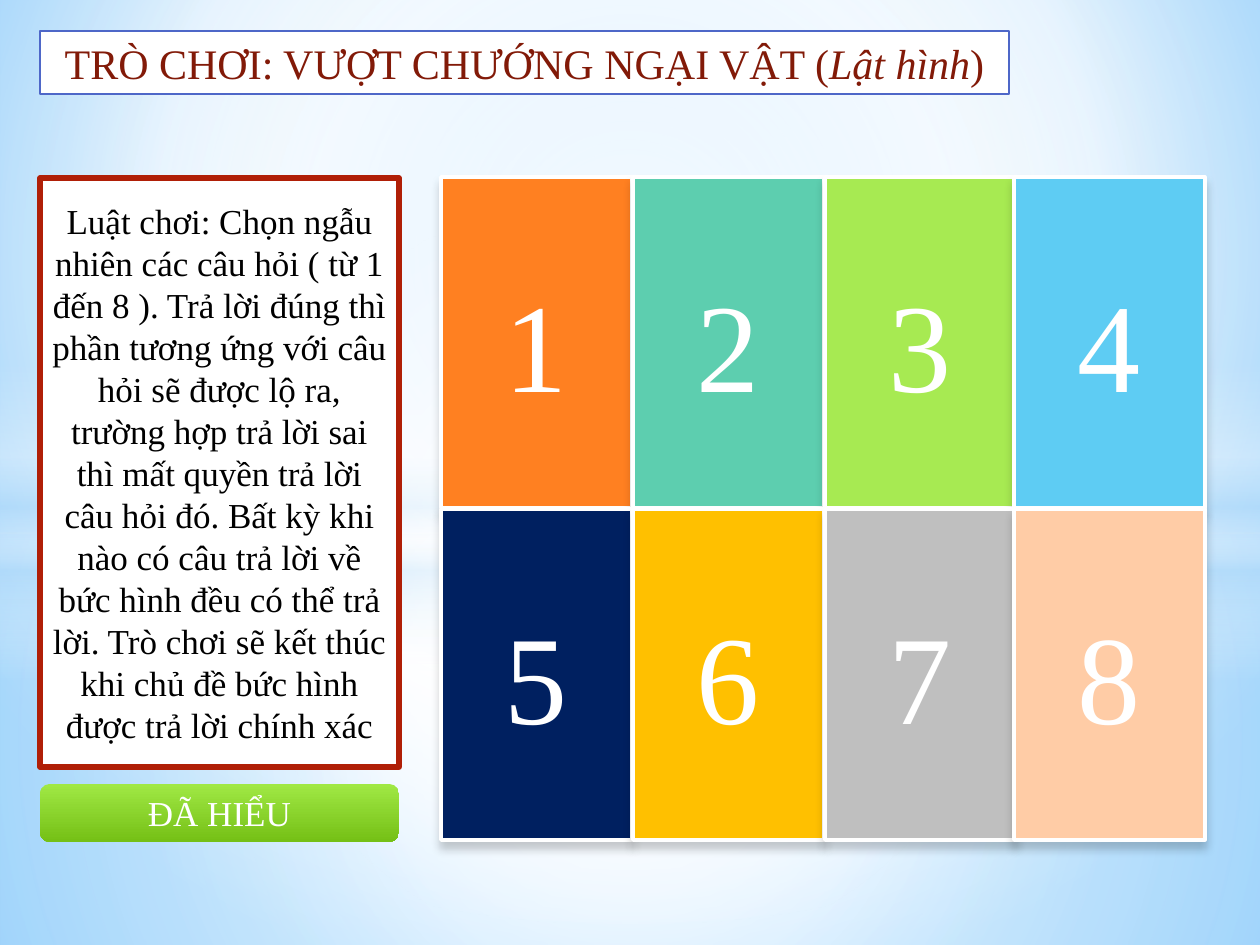
from lxml import etree
from pptx import Presentation
from pptx.dml.color import RGBColor
from pptx.enum.shapes import MSO_SHAPE
from pptx.enum.text import MSO_ANCHOR, PP_ALIGN
from pptx.oxml.ns import qn
from pptx.util import Pt

RECT, ROUNDED, OVAL = MSO_SHAPE.RECTANGLE, MSO_SHAPE.ROUNDED_RECTANGLE, MSO_SHAPE.OVAL
TOP, MIDDLE = MSO_ANCHOR.TOP, MSO_ANCHOR.MIDDLE
CENTER = PP_ALIGN.CENTER
FONT = "Times New Roman"
PX = 914400 / 126


def set_gradient(properties, stops, focus=None):
    """Replace a solid fill by (position, colour, opacity) stops, vertical unless focus is given."""
    gradient = etree.Element(qn("a:gradFill"), rotWithShape="1")
    stop_list = etree.SubElement(gradient, qn("a:gsLst"))
    for position, colour, opacity in stops:
        stop = etree.SubElement(stop_list, qn("a:gs"), pos=str(position * 1000))
        tint = etree.SubElement(stop, qn("a:srgbClr"), val=colour)
        if opacity < 100:
            etree.SubElement(tint, qn("a:alpha"), val=str(opacity * 1000))
    if focus:
        path = etree.SubElement(gradient, qn("a:path"), path="circle")
        sides = {side: str(value * 1000) for side, value in zip("ltrb", focus)}
        etree.SubElement(path, qn("a:fillToRect"), **sides)
    else:
        etree.SubElement(gradient, qn("a:lin"), ang="5400000", scaled="0")
    properties.replace(properties.find(qn("a:solidFill")), gradient)


def add_box(kind, place, fill, line=None, line_width=0, runs=(), size=20, colour="FFFFFF", anchor=MIDDLE):
    """Add a shape at a px place, with (text, italic) runs in one centred paragraph."""
    box = page.shapes.add_shape(kind, *[round(length * PX) for length in place])
    box.shadow.inherit = False
    box.fill.solid()
    box.fill.fore_color.rgb = RGBColor.from_string(fill)
    if line:
        box.line.color.rgb = RGBColor.from_string(line)
        box.line.width = Pt(line_width)
    else:
        box.line.fill.background()
    frame = box.text_frame
    frame.word_wrap = True
    frame.vertical_anchor = anchor
    para = frame.paragraphs[0]
    para.alignment = CENTER
    for text, italic in runs:
        span = para.add_run()
        span.text = text
        span.font.name = FONT
        span.font.size = Pt(size)
        span.font.italic = italic
        span.font.color.rgb = RGBColor.from_string(colour)
    return box


deck = Presentation()
deck.slide_width = round(1260 * PX)
deck.slide_height = round(945 * PX)
page = deck.slides.add_slide(deck.slide_layouts[6])

# Background
page.background.fill.solid()
set_gradient(page._element.find(".//" + qn("p:bgPr")),
             [(0, "9ED5FF", 100), (60, "FFFFFF", 100), (100, "5BB9FF", 100)], (20, 10, 20, 60))

# Soft light layers
MIDPOINT = (50, 50, 50, 50)
layers = [
    (RECT, (0, 533, 1260, 412), MIDPOINT,
     [(0, "FFFFFF", 91), (37, "FFFFFF", 76), (100, "B4DCFA", 79)]),
    (RECT, (0, 0, 1260, 533), MIDPOINT,
     [(0, "FFFFFF", 89), (48, "FFFFFF", 62), (100, "B4DCFA", 79)]),
    (RECT, (0, 365, 1260, 315), None,
     [(0, "FFFFFF", 0), (29, "FFFFFF", 30), (45, "B4DCFA", 40),
      (55, "FFFFFF", 26), (65, "B4DCFA", 60), (100, "FFFFFF", 0)]),
    (OVAL, (0, 220, 1260, 703), MIDPOINT, [(0, "FFFFFF", 100), (54, "FFFFFF", 0)]),
]
for kind, place, focus, stops in layers:
    layer = add_box(kind, place, "FFFFFF")
    set_gradient(layer.element.spPr, stops, focus)

# Title
add_box(RECT, (40, 31, 969, 63), "FFFFFF", "4E67C8", 0.75,
        [("TRÒ CHƠI: VƯỢT CHƯỚNG NGẠI VẬT (", False), ("Lật hình", True), (")", False)],
        24, "821A08", TOP)

# Numbered tiles, four to a row
TILE_COLOURS = ["FF8021", "5DCEAF", "A7EA52", "5ECCF3", "002060", "FFC000", "BFBFBF", "FFCCA6"]
COLUMNS = [441, 633, 825, 1014]
ROWS = [177, 509]
for index, tile_colour in enumerate(TILE_COLOURS):
    row, column = divmod(index, len(COLUMNS))
    tile = add_box(RECT, (COLUMNS[column], ROWS[row], 191, 331), tile_colour, "FFFFFF", 2,
                   [(str(index + 1), False)], 72)
    effects = tile.element.spPr.find(qn("a:effectLst"))
    shadow = etree.SubElement(effects, qn("a:outerShdw"), blurRad=str(Pt(5)), dist=str(Pt(4)),
                              dir="5400000", rotWithShape="0")
    shade = etree.SubElement(shadow, qn("a:srgbClr"), val="000000")
    etree.SubElement(shade, qn("a:alpha"), val="20000")

# Rules of the game
rules = (
    "Luật chơi: Chọn ngẫu nhiên các câu hỏi ( từ 1 đến 8 ). Trả lời đúng thì phần tương ứng "
    "với câu hỏi sẽ được lộ ra, trường hợp trả lời sai thì mất quyền trả lời câu hỏi đó. "
    "Bất kỳ khi nào có câu trả lời về bức hình đều có thể trả lời. "
    "Trò chơi sẽ kết thúc khi chủ đề bức hình được trả lời chính xác"
)
add_box(RECT, (40, 178, 359, 589), "FFFFFF", "B01F07", 3, [(rules, False)], 20, "000000")

# Button
button = add_box(ROUNDED, (40, 784, 359, 58), "A0E844", runs=[("ĐÃ HIỂU", False)])
set_gradient(button.element.spPr, [(0, "A0E844", 100), (100, "75C016", 100)])

deck.save("out.pptx")
